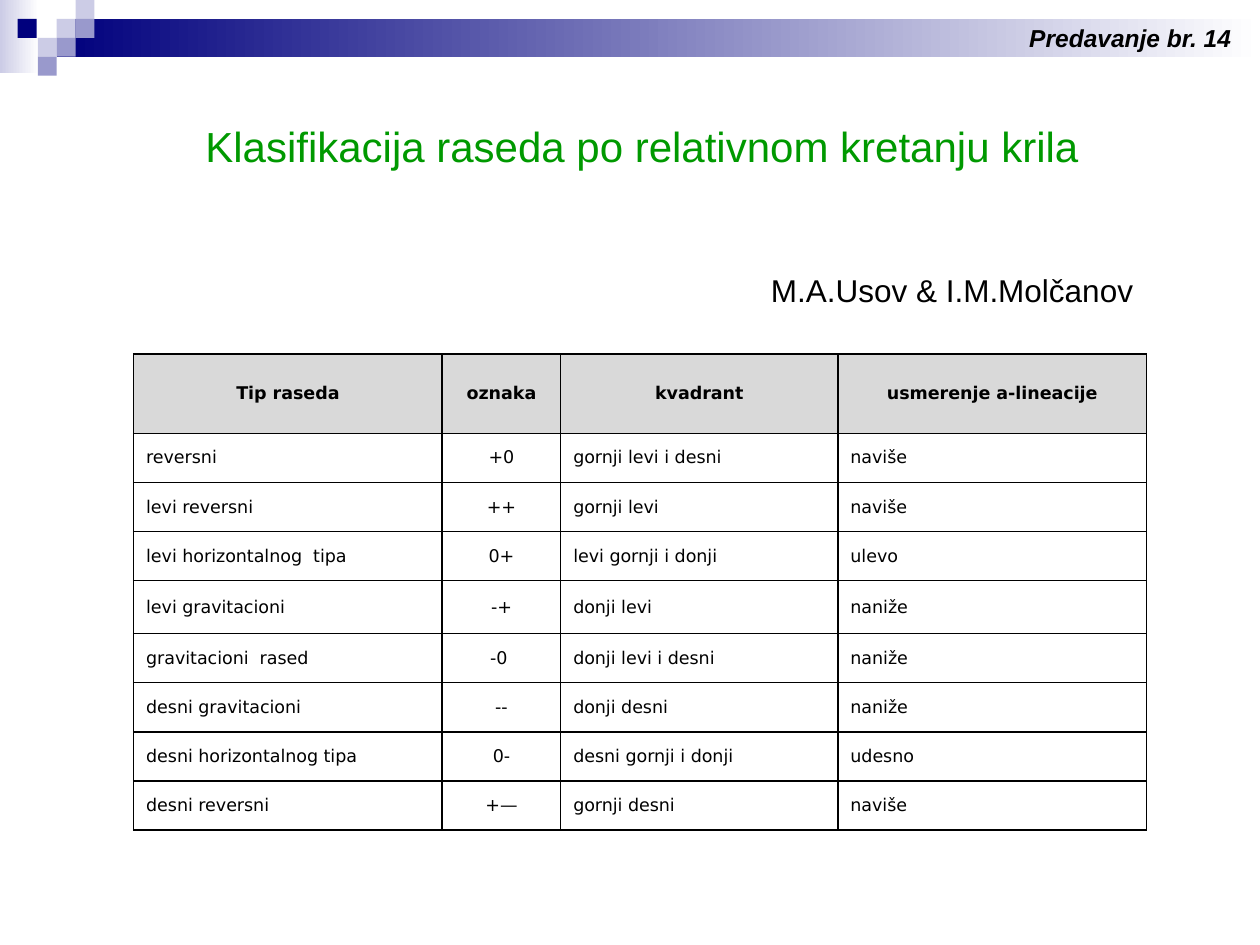
from lxml.etree import SubElement
from pptx import Presentation
from pptx.dml.color import RGBColor
from pptx.enum.shapes import MSO_SHAPE
from pptx.enum.text import MSO_ANCHOR, MSO_AUTO_SIZE, PP_ALIGN
from pptx.oxml.ns import qn
from pptx.util import Inches, Pt

NAVY = RGBColor(0x00, 0x00, 0x7D)
LAVENDER = RGBColor(0xCC, 0xCC, 0xE6)
VIOLET = RGBColor(0x99, 0x99, 0xCC)
GREEN = RGBColor(0x00, 0x99, 0x00)
GRAY = RGBColor(0xD9, 0xD9, 0xD9)
BLACK = RGBColor(0x00, 0x00, 0x00)
WHITE = RGBColor(0xFF, 0xFF, 0xFF)

SQUARE = 0.15
SQUARES = [
    (0.45, 0.15, LAVENDER),
    (0.6, 0, LAVENDER),
    (0.6, 0.15, VIOLET),
    (0.3, 0.3, LAVENDER),
    (0.14, 0.15, NAVY),
    (0.45, 0.3, VIOLET),
    (0.3, 0.45, VIOLET),
]

COLUMN_WIDTHS = [2.45, 0.94, 2.2, 2.45]
ROW_HEIGHTS = [0.63, 0.39, 0.39, 0.39, 0.42, 0.39, 0.39, 0.39, 0.39]
FAULTS = [
    ("Tip raseda", "oznaka", "kvadrant", "usmerenje a-lineacije"),
    ("reversni", "+0", "gornji levi i desni", "naviše"),
    ("levi reversni", "++", "gornji levi", "naviše"),
    ("levi horizontalnog  tipa", "0+", "levi gornji i donji", "ulevo"),
    ("levi gravitacioni", "-+", "donji levi", "naniže"),
    ("gravitacioni  rased", "-0 ", "donji levi i desni", "naniže"),
    ("desni gravitacioni", "--", "donji desni", "naniže"),
    ("desni horizontalnog tipa", "0-", "desni gornji i donji", "udesno"),
    ("desni reversni", "+—", "gornji desni", "naviše"),
]


def write_text(frame, text, color, align=PP_ALIGN.LEFT, **formats):
    para = frame.paragraphs[0]
    para.alignment = align
    span = para.add_run()
    span.text = text
    span.font.color.rgb = color
    for name, value in formats.items():
        setattr(span.font, name, value)


def add_block(page, place, colors):
    block = page.shapes.add_shape(MSO_SHAPE.RECTANGLE, *map(Inches, place))
    block.shadow.inherit = False
    block.line.fill.background()
    if len(colors) == 1:
        block.fill.solid()
        block.fill.fore_color.rgb = colors[0]
    else:
        block.fill.gradient()
        block.fill.gradient_angle = 0
        for stop, color in zip(block.fill.gradient_stops, colors):
            stop.color.rgb = color


def fill_label(box, text, color, **formats):
    frame = box.text_frame
    settings = {
        "word_wrap": False,
        "auto_size": MSO_AUTO_SIZE.SHAPE_TO_FIT_TEXT,
        "vertical_anchor": MSO_ANCHOR.TOP,
    }
    for name, value in settings.items():
        setattr(frame, name, value)
    write_text(frame, text, color, name="Arial", **formats)


def add_label(page, place, text, **formats):
    box = page.shapes.add_textbox(*map(Inches, place))
    fill_label(box, text, BLACK, **formats)


def set_title(page, place, text):
    title = page.shapes.title
    for name, value in zip(("left", "top", "width", "height"), place):
        setattr(title, name, Inches(value))
    fill_label(title, text, GREEN, size=Pt(24))
    page.shapes._spTree.append(title._element)


def add_borders(cell):
    properties = cell._tc.get_or_add_tcPr()
    for position, side in enumerate(("lnL", "lnR", "lnT", "lnB")):
        line = properties.makeelement(qn(f"a:{side}"), {"w": str(Pt(1))})
        fill = SubElement(line, qn("a:solidFill"))
        SubElement(fill, qn("a:srgbClr"), val=str(BLACK))
        properties.insert(position, line)


def add_fault_table(page, place):
    shape = page.shapes.add_table(len(FAULTS), len(COLUMN_WIDTHS), *map(Inches, place))
    table = shape.table
    for column, width in zip(table.columns, COLUMN_WIDTHS):
        column.width = Inches(width)
    for row, height in zip(table.rows, ROW_HEIGHTS):
        row.height = Inches(height)
    for row_index, values in enumerate(FAULTS):
        header = row_index == 0
        for column_index, text in enumerate(values):
            cell = table.cell(row_index, column_index)
            cell.vertical_anchor = MSO_ANCHOR.MIDDLE
            cell.fill.solid()
            cell.fill.fore_color.rgb = GRAY if header else WHITE
            centered = header or column_index == 1
            align = PP_ALIGN.CENTER if centered else PP_ALIGN.LEFT
            write_text(cell.text_frame, text, BLACK, align,
                       name="DejaVu Sans", size=Pt(10), bold=header)
            add_borders(cell)


def main():
    deck = Presentation()
    deck.slide_width = Inches(10)
    deck.slide_height = Inches(7.5)
    page = deck.slides.add_slide(deck.slide_layouts[5])
    add_block(page, (0, 0, 0.31, 0.58), (LAVENDER, WHITE))
    add_block(page, (0.45, 0.15, 9.55, 0.3), (NAVY, WHITE))
    for left, top, color in SQUARES:
        add_block(page, (left, top, SQUARE, SQUARE), (color,))
    add_label(page, (8.07, 0.13, 1.81, 0.33), "Predavanje br. 14",
              size=Pt(14), bold=True, italic=True)
    add_fault_table(page, (1.06, 2.81, 8.03, 3.78))
    add_label(page, (6.02, 2.1, 3.08, 0.4), "M.A.Usov & I.M.Molčanov", size=Pt(18))
    set_title(page, (1.53, 0.91, 7.28, 0.51),
              "Klasifikacija raseda po relativnom kretanju krila")
    deck.save("out.pptx")


if __name__ == "__main__":
    main()
